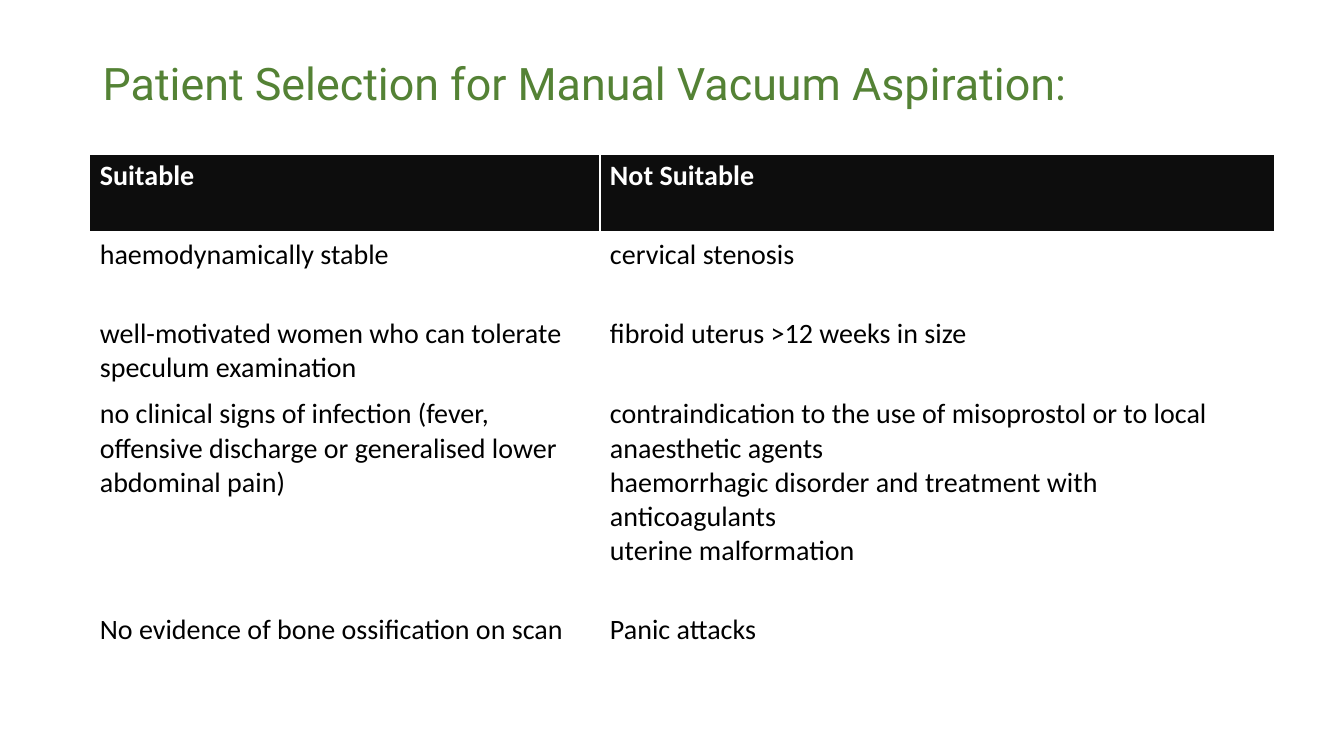
from dataclasses import dataclass

from lxml.etree import SubElement
from pptx import Presentation
from pptx.dml.color import RGBColor
from pptx.enum.text import MSO_ANCHOR
from pptx.oxml.ns import qn
from pptx.util import Inches, Pt


@dataclass(frozen=True)
class Theme:
    green: str = "548235"
    header: str = "0D0D0D"
    white: str = "FFFFFF"
    black: str = "000000"
    title_font: str = "Roboto"
    body_font: str = "Calibri"
    title_size: int = 32
    body_size: int = 20


COLUMNS = [5.06, 6.69]
ROW_HEIGHTS = [0.78, 0.78, 0.8, 2.14, 0.45]
ROWS = [
    ("Suitable", "Not Suitable"),
    ("haemodynamically stable", "cervical stenosis"),
    ("well-motivated women who can tolerate speculum examination",
     "fibroid uterus >12 weeks in size"),
    ("no clinical signs of infection (fever, offensive discharge or "
     "generalised lower abdominal pain)",
     "contraindication to the use of misoprostol or to local anaesthetic agents\n"
     "haemorrhagic disorder and treatment with anticoagulants\n"
     "uterine malformation"),
    ("No evidence of bone ossification on scan", "Panic attacks"),
]


class SlideBuilder:
    """Draws styled elements on one slide."""

    def __init__(self, s, theme):
        self.s = s
        self.theme = theme

    def set_text(self, tf, text, font, size, color, bold=False):
        tf.text = text
        for p in tf.paragraphs:
            p.font.name = font
            p.font.size = Pt(size)
            p.font.bold = bold
            p.font.color.rgb = RGBColor.from_string(color)

    def title(self, text, left, top, width, height):
        sp = self.s.shapes.add_textbox(
            Inches(left), Inches(top), Inches(width), Inches(height))
        tf = sp.text_frame
        tf.word_wrap = True
        tf.vertical_anchor = MSO_ANCHOR.MIDDLE
        t = self.theme
        self.set_text(tf, text, t.title_font, t.title_size, t.green)
        tf.paragraphs[0].line_spacing = 0.9

    def borders(self, cell, bottom):
        tcPr = cell._tc.get_or_add_tcPr()
        widths = {"a:lnL": 1, "a:lnR": 1, "a:lnT": 1, "a:lnB": bottom}
        for tag, width in widths.items():
            ln = SubElement(tcPr, qn(tag), w=str(Pt(width)))
            fill = SubElement(ln, qn("a:solidFill"))
            SubElement(fill, qn("a:srgbClr"), val=self.theme.white)

    def table(self, rows, left, top, widths, heights):
        t = self.theme
        table = self.s.shapes.add_table(
            len(rows), len(widths), Inches(left), Inches(top),
            Inches(sum(widths)), Inches(sum(heights))).table
        table.horz_banding = False
        for column, width in zip(table.columns, widths):
            column.width = Inches(width)
        for i, (row, height) in enumerate(zip(rows, heights)):
            table.rows[i].height = Inches(height)
            header = i == 0
            for j, text in enumerate(row):
                cell = table.cell(i, j)
                self.borders(cell, 3 if header else 1)
                if header:
                    cell.fill.solid()
                    cell.fill.fore_color.rgb = RGBColor.from_string(t.header)
                else:
                    cell.fill.background()
                self.set_text(cell.text_frame, text, t.body_font, t.body_size,
                              t.white if header else t.black, header)


def main():
    prs = Presentation()
    prs.slide_width = Inches(13.33)
    prs.slide_height = Inches(7.5)
    s = prs.slides.add_slide(prs.slide_layouts[6])
    builder = SlideBuilder(s, Theme())
    builder.title("Patient Selection for Manual Vacuum Aspiration:",
                  0.92, 0.5, 11.5, 0.7)
    builder.table(ROWS, 0.89, 1.53, COLUMNS, ROW_HEIGHTS)
    prs.save("out.pptx")


if __name__ == "__main__":
    main()
